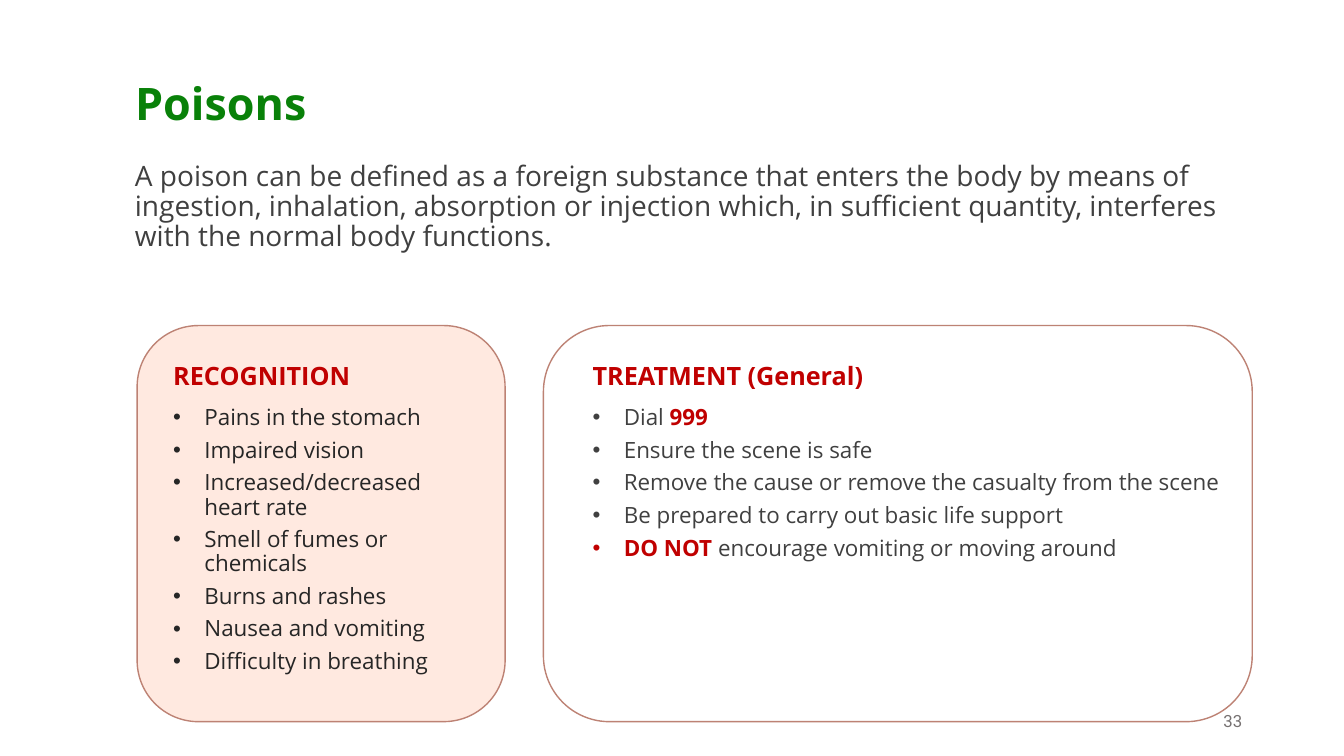
from lxml.etree import SubElement
from pptx import Presentation
from pptx.dml.color import RGBColor
from pptx.enum.shapes import MSO_SHAPE
from pptx.enum.text import MSO_ANCHOR, MSO_AUTO_SIZE, PP_ALIGN
from pptx.oxml.ns import qn
from pptx.util import Inches, Pt

RED = "C00000"
DARK_GREY = "404040"


def color(hex_string):
    return RGBColor.from_string(hex_string)


def add_run(paragraph, text, size, hex_string, bold=False, font="Open Sans"):
    run = paragraph.add_run()
    run.text = text
    run.font.name = font
    run.font.size = Pt(size)
    run.font.bold = bold
    run.font.color.rgb = color(hex_string)


presentation = Presentation()
presentation.slide_width = Inches(13.33)
presentation.slide_height = Inches(7.5)
slide = presentation.slides.add_slide(presentation.slide_layouts[5])

# Title
title = slide.shapes.title
title.left, title.top = Inches(1.24), Inches(0.76)
title.width, title.height = Inches(2.5), Inches(0.64)
title.text_frame.auto_size = MSO_AUTO_SIZE.NONE
title.text_frame.vertical_anchor = MSO_ANCHOR.TOP
paragraph = title.text_frame.paragraphs[0]
paragraph.alignment = PP_ALIGN.LEFT
paragraph.line_spacing = 0.9
add_run(paragraph, "Poisons", 32, "098109", bold=True)

# Definition
definition = slide.shapes.add_textbox(Inches(1.24), Inches(1.56), Inches(11.07), Inches(1.11))
definition.text_frame.word_wrap = True
paragraph = definition.text_frame.paragraphs[0]
paragraph.line_spacing = 0.9
add_run(
    paragraph,
    "A poison can be defined as a foreign substance that enters the body by means of "
    "ingestion, inhalation, absorption or injection which, in sufficient quantity, "
    "interferes with the normal body functions.",
    20,
    DARK_GREY,
)

# Panels: card left and width, fill, text left, width and height, text colour,
# heading, bullets as (red lead, plain text, red tail)
panels = [
    (1.36, 3.65, "FFE9E0", 1.62, 3.17, 3.48, "262626", "RECOGNITION", [
        ("", "Pains in the stomach", ""),
        ("", "Impaired vision", ""),
        ("", "Increased/decreased heart rate", ""),
        ("", "Smell of fumes or chemicals", ""),
        ("", "Burns and rashes", ""),
        ("", "Nausea and vomiting", ""),
        ("", "Difficulty in breathing", ""),
    ]),
    (5.39, 7.03, "FFFFFF", 5.78, 6.53, 2.24, DARK_GREY, "TREATMENT (General)", [
        ("", "Dial ", "999"),
        ("", "Ensure the scene is safe", ""),
        ("", "Remove the cause or remove the casualty from the scene", ""),
        ("", "Be prepared to carry out basic life support", ""),
        ("DO NOT ", "encourage vomiting or moving around", ""),
    ]),
]
for (card_left, card_width, fill, text_left, text_width, text_height,
     text_color, heading, bullets) in panels:
    card = slide.shapes.add_shape(
        MSO_SHAPE.ROUNDED_RECTANGLE,
        Inches(card_left), Inches(3.23), Inches(card_width), Inches(3.93),
    )
    card.shadow.inherit = False
    card.fill.solid()
    card.fill.fore_color.rgb = color(fill)
    card.line.color.rgb = color("BD8274")
    card.line.width = Pt(1)

    text_box = slide.shapes.add_textbox(
        Inches(text_left), Inches(3.56), Inches(text_width), Inches(text_height)
    )
    text_frame = text_box.text_frame
    text_frame.word_wrap = True
    paragraph = text_frame.paragraphs[0]
    paragraph.line_spacing = 0.9
    paragraph.space_after = Pt(11)
    add_run(paragraph, heading, 18, RED, bold=True)

    for lead, text, tail in bullets:
        paragraph = text_frame.add_paragraph()
        paragraph.line_spacing = 0.9
        paragraph.space_after = Pt(6)
        properties = paragraph._p.get_or_add_pPr()
        properties.set("marL", str(Inches(0.31)))
        properties.set("indent", str(-Inches(0.31)))
        SubElement(properties, qn("a:buFont")).set("typeface", "Arial")
        SubElement(properties, qn("a:buChar")).set("char", "•")
        if lead:
            add_run(paragraph, lead, 16, RED, bold=True)
        add_run(paragraph, text, 16, text_color)
        if tail:
            add_run(paragraph, tail, 16, RED, bold=True)

# Page number
page_number = slide.shapes.add_textbox(Inches(9.42), Inches(6.95), Inches(3), Inches(0.4))
page_number.text_frame.word_wrap = True
page_number.text_frame.vertical_anchor = MSO_ANCHOR.MIDDLE
paragraph = page_number.text_frame.paragraphs[0]
paragraph.alignment = PP_ALIGN.RIGHT
add_run(paragraph, "33", 12, "767171", font="Roboto")

presentation.save("out.pptx")
